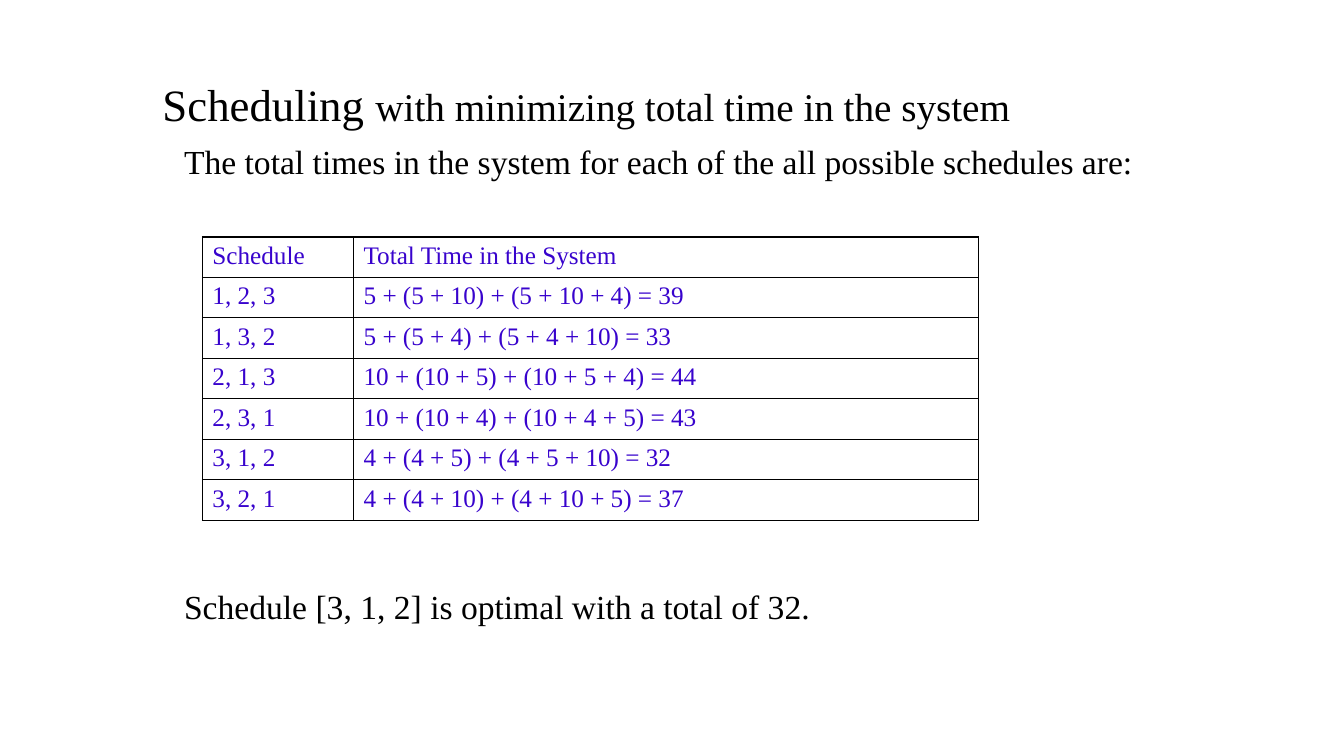
from dataclasses import dataclass

from lxml import etree
from pptx import Presentation
from pptx.dml.color import RGBColor
from pptx.enum.text import MSO_ANCHOR, MSO_AUTO_SIZE, PP_ALIGN
from pptx.oxml.ns import qn
from pptx.util import Cm, Pt

LEFT = PP_ALIGN.LEFT
TOP, MIDDLE = MSO_ANCHOR.TOP, MSO_ANCHOR.MIDDLE
NO_AUTOFIT = MSO_AUTO_SIZE.NONE

FONT = "Times New Roman"
BLACK, WHITE, VIOLET = "000000", "FFFFFF", "3803CD"
TITLE_ONLY = 5
BORDER_PT = 1
ROW_HEIGHT = 1.02
COLUMN_WIDTHS = (3.81, 15.75)


@dataclass(frozen=True)
class Box:
    """Position and size in centimetres."""
    left: float
    top: float
    width: float
    height: float

    def lengths(self) -> tuple:
        return Cm(self.left), Cm(self.top), Cm(self.width), Cm(self.height)


@dataclass(frozen=True)
class ScheduleRow:
    schedule: str
    total_time: str


TITLE_BOX = Box(3.84, 1.8, 24.59, 1.63)
BODY_BOX = Box(4.39, 3.43, 25.07, 13.59)
TABLE_BOX = Box(5.1, 5.97, sum(COLUMN_WIDTHS), ROW_HEIGHT)

SCHEDULE_ROWS = [
    ScheduleRow("Schedule", "Total Time in the System"),
    ScheduleRow("1, 2, 3", "5 + (5 + 10) + (5 + 10 + 4) = 39"),
    ScheduleRow("1, 3, 2", "5 + (5 + 4) + (5 + 4 + 10) = 33"),
    ScheduleRow("2, 1, 3", "10 + (10 + 5) + (10 + 5 + 4) = 44"),
    ScheduleRow("2, 3, 1", "10 + (10 + 4) + (10 + 4 + 5) = 43"),
    ScheduleRow("3, 1, 2", "4 + (4 + 5) + (4 + 5 + 10) = 32"),
    ScheduleRow("3, 2, 1", "4 + (4 + 10) + (4 + 10 + 5) = 37"),
]


def rgb(hex_color: str) -> RGBColor:
    return RGBColor.from_string(hex_color)


def write(paragraph, text: str, *, size: float, color: str = BLACK,
          space_before: float = 0) -> None:
    """Append one formatted run to a left-aligned paragraph."""
    paragraph.alignment = LEFT
    paragraph.space_before = Pt(space_before)
    run = paragraph.add_run()
    run.text = text
    run.font.name = FONT
    run.font.size = Pt(size)
    run.font.color.rgb = rgb(color)


def set_frame(frame, anchor) -> None:
    frame.word_wrap = True
    frame.auto_size = NO_AUTOFIT
    frame.vertical_anchor = anchor


def add_borders(cell, color: str) -> None:
    properties = cell._tc.get_or_add_tcPr()
    for side in ("a:lnL", "a:lnR", "a:lnT", "a:lnB"):
        line = etree.SubElement(properties, qn(side), w=str(Pt(BORDER_PT)))
        fill = etree.SubElement(line, qn("a:solidFill"))
        etree.SubElement(fill, qn("a:srgbClr"), val=color)


def add_title(slide) -> None:
    title = slide.shapes.title
    title.left, title.top, title.width, title.height = TITLE_BOX.lengths()
    set_frame(title.text_frame, MIDDLE)
    heading = title.text_frame.paragraphs[0]
    heading.line_spacing = 1.0
    write(heading, "Scheduling ", size=32)
    write(heading, "with minimizing total time in the system", size=28)


def add_body(slide) -> None:
    body = slide.shapes.add_textbox(*BODY_BOX.lengths()).text_frame
    set_frame(body, TOP)
    write(body.paragraphs[0],
          "The total times in the system for each of the all possible schedules are:",
          size=24)
    # The spacing leaves room for the table
    write(body.add_paragraph(), "Schedule [3, 1, 2] is optimal with a total of 32.",
          size=24, space_before=289)


def add_schedule_table(slide, rows: list[ScheduleRow]) -> None:
    left, top, width, row_height = TABLE_BOX.lengths()
    table = slide.shapes.add_table(len(rows), len(COLUMN_WIDTHS), left, top,
                                   width, row_height * len(rows)).table
    table.horz_banding = False
    for column, column_width in zip(table.columns, COLUMN_WIDTHS):
        column.width = Cm(column_width)
    for table_row, row in zip(table.rows, rows):
        table_row.height = row_height
        for cell, text in zip(table_row.cells, (row.schedule, row.total_time)):
            add_borders(cell, BLACK)
            cell.fill.solid()
            cell.fill.fore_color.rgb = rgb(WHITE)
            write(cell.text_frame.paragraphs[0], text, size=18, color=VIOLET)


def main() -> None:
    presentation = Presentation()
    presentation.slide_width, presentation.slide_height = Cm(33.87), Cm(19.05)
    slide = presentation.slides.add_slide(presentation.slide_layouts[TITLE_ONLY])
    slide.background.fill.solid()
    slide.background.fill.fore_color.rgb = rgb(WHITE)

    add_body(slide)
    add_title(slide)
    add_schedule_table(slide, SCHEDULE_ROWS)

    presentation.save("out.pptx")


if __name__ == "__main__":
    main()
